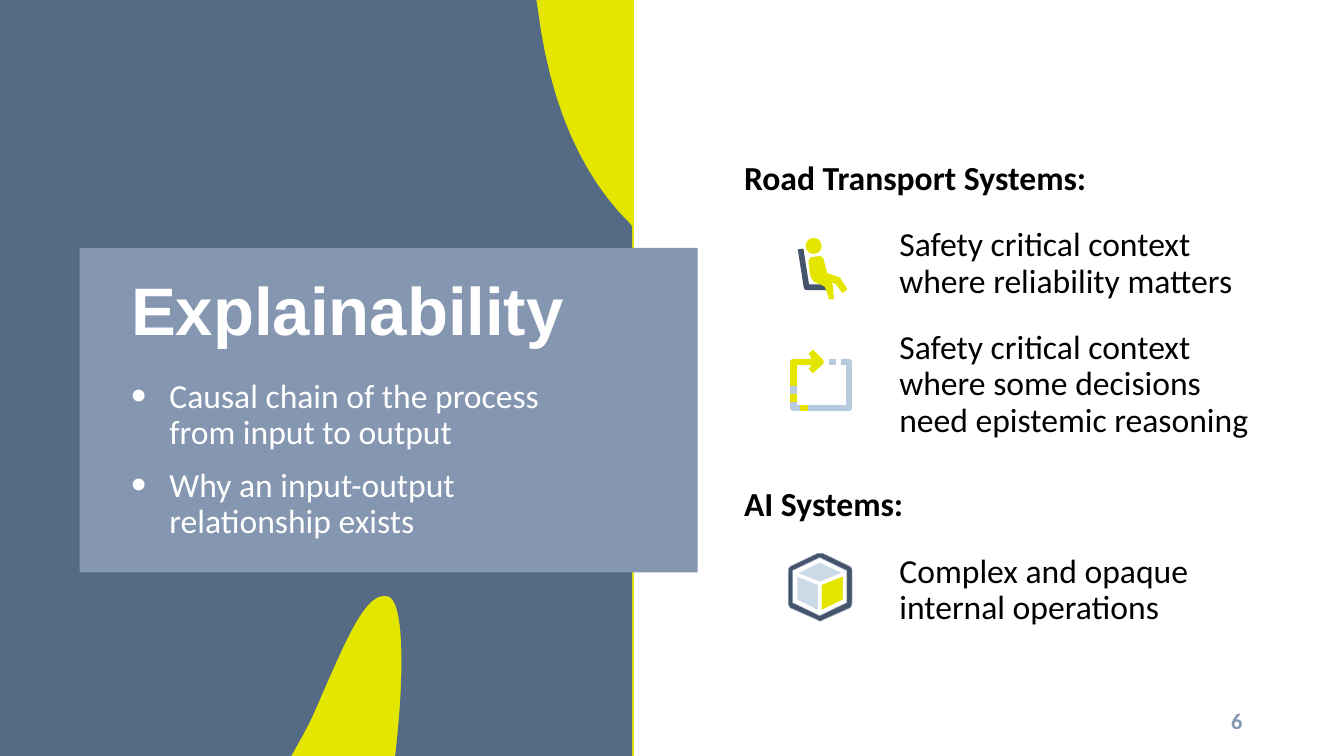
from lxml import etree
from pptx import Presentation
from pptx import util as u
from pptx.dml.color import RGBColor
from pptx.enum import shapes, text
from pptx.oxml import ns

PX = 9144  # EMU per px, 100 px to the inch
CURVE_STEPS = 12
COLORS = {
    "yellow": "E5E600", "panel": "556A85", "card": "8496B0", "navy": "44546A",
    "pale": "CCDAE8", "sky": "B8CBDE", "white": "FFFFFF", "black": "000000",
}

# Outlines in px: M move, L line, C curve, Z close
PANEL = ("M 0 0 L 532 0 L 533 6 C 545 105 578 176 625 222 L 627 225 L 627 750 "
         "L 392 750 L 394 731 C 401 663 400 598 386 592 C 364 584 345 630 313 704 "
         "C 309 713 305 721 300 730 L 289 750 L 0 750 Z")
CUBE_FACES = ("M 813 558 L 836 568 C 827 571 821 574 813 577 C 806 574 798 571 791 568 Z "
              "M 788 570 C 792 572 805 578 811 580 L 811 606 L 788 596 Z")
CUBE_FRONT = "M 815 608 L 815 580 L 840 569 L 840 597 Z"
CUBE_EDGES = "M 813 607 L 813 579 L 788 569"
HEXAGON = "M 813 553 L 840 566 L 840 598 L 813 611 L 786 598 L 786 566 Z "
CUBE_GAP = HEXAGON + "M 813 558 L 836 569 L 836 595 L 813 606 L 791 595 L 791 569 Z"
CUBE_FRAME = HEXAGON + (
    "M 813 549 C 813 549 812 549 811 549 L 784 562 C 783 563 782 564 782 566 "
    "L 782 598 C 782 600 783 602 784 603 L 811 615 C 812 616 813 616 813 616 "
    "C 814 616 815 616 816 615 L 843 603 C 844 602 845 600 845 598 L 845 566 "
    "C 845 564 844 563 843 562 L 816 549 C 815 549 814 549 813 549 Z")
LOOP = "M 834 359 L 842 359 L 842 405 L 787 405 L 787 359 L 801 359"
LOOP_TURN = "M 787 383 L 787 359 L 814 359"
LOOP_HEAD = "M 804 349 L 814 359 L 804 368"
SEAT = "M 794 247 L 800 285 L 825 285"
TORSO = ("M 819 281 C 821 281 823 279 822 277 L 817 258 C 817 256 815 254 812 254 "
         "L 806 255 C 803 255 802 258 802 260 L 803 269 C 804 279 809 283 819 281 Z")
LEGS = ("M 839 288 L 837 290 C 836 291 835 290 835 290 L 829 282 L 821 279 "
        "C 821 279 812 274 812 275 L 819 276 L 819 277 L 823 280 "
        "C 824 280 825 281 825 282 C 826 282 826 283 826 284 L 827 295 "
        "C 827 296 827 297 826 297 L 824 297 C 823 297 822 297 822 296 L 819 287 "
        "C 818 285 818 284 817 284 L 810 280 C 810 280 809 278 809 277 L 818 270 "
        "L 832 275 C 833 275 834 276 834 277 L 840 286 C 840 287 840 288 839 288 Z")

BODY = {"size": u.Pt(24), "name": "Calibri"}
HEADING = {**BODY, "bold": True}
TITLE = {"size": u.Pt(48), "name": "Arial", "bold": True}
PAGE_NUMBER = {"size": u.Pt(16), "name": "Calibri", "bold": True}
BODY_SPACING = {"line_spacing": 0.9, "space_after": u.Pt(6)}


def rgb(name):
    return RGBColor.from_string(COLORS[name])


def set_all(target, values):
    for key, value in values.items():
        setattr(target, key, value)


def paint(shape, fill=None, line=None, weight=1):
    shape.shadow.inherit = False
    if fill:
        shape.fill.solid()
        shape.fill.fore_color.rgb = rgb(fill)
    else:
        shape.fill.background()
    if line:
        shape.line.color.rgb = rgb(line)
        shape.line.width = u.Pt(weight)
    else:
        shape.line.fill.background()


def add_block(slide, kind, box, **look):
    paint(slide.shapes.add_shape(kind, *(n * PX for n in box)), **look)


def curve_points(p0, p1, p2, p3):
    for step in range(1, CURVE_STEPS + 1):
        t = step / CURVE_STEPS
        s = 1 - t
        yield tuple(s**3 * a + 3 * s * s * t * b + 3 * s * t * t * c + t**3 * d
                    for a, b, c, d in zip(p0, p1, p2, p3))


def read_contours(outline):
    """Return (points, closed) pairs with the curves flattened."""
    contours = []
    for part in outline.split("M")[1:]:
        words = part.replace("Z", "").split()
        points, pending, in_curve = [], [], False
        while words:
            if words[0] in "LC":
                in_curve = words.pop(0) == "C"
            pending.append((int(words.pop(0)) * PX, int(words.pop(0)) * PX))
            if not in_curve:
                points += pending
                pending = []
            elif len(pending) == 3:
                points += curve_points(points[-1], *pending)
                pending = []
        contours.append((points, "Z" in part))
    return contours


def add_outline(slide, outline, **look):
    builder = None
    for points, closed in read_contours(outline):
        if builder is None:
            builder = slide.shapes.build_freeform(*points[0], scale=1.0)
        else:
            builder.move_to(*points[0])
        builder.add_line_segments(points[1:], close=closed)
    paint(builder.convert_to_shape(), **look)


def add_stroke(slide, ends, color, weight):
    stroke = slide.shapes.add_connector(shapes.MSO_CONNECTOR.STRAIGHT, *(n * PX for n in ends))
    stroke.line.color.rgb = rgb(color)
    stroke.line.width = u.Pt(weight)
    etree.SubElement(stroke._element.spPr, ns.qn("a:effectLst"))


def add_bullet(paragraph, color):
    props = paragraph._p.get_or_add_pPr()
    props.set("marL", str(38 * PX))
    props.set("indent", str(-38 * PX))
    bullet_color = etree.SubElement(props, ns.qn("a:buClr"))
    etree.SubElement(bullet_color, ns.qn("a:srgbClr"), val=COLORS[color])
    etree.SubElement(props, ns.qn("a:buSzPct"), val="130000")
    etree.SubElement(props, ns.qn("a:buFont"), typeface="Arial")
    etree.SubElement(props, ns.qn("a:buChar"), char="•")


def add_text(slide, box, lines, font, color="black", spacing=BODY_SPACING,
             bullets=False, **frame_format):
    frame = slide.shapes.add_textbox(*(n * PX for n in box)).text_frame
    margins = dict.fromkeys(
        ("margin_left", "margin_top", "margin_right", "margin_bottom"), 0)
    set_all(frame, {"word_wrap": True, **margins, **frame_format})
    for index, line in enumerate(lines):
        paragraph = frame.add_paragraph() if index else frame.paragraphs[0]
        set_all(paragraph, spacing)
        if index:
            paragraph.space_before = u.Pt(6)
        if bullets:
            add_bullet(paragraph, color)
        run = paragraph.add_run()
        run.text = line
        set_all(run.font, font)
        run.font.color.rgb = rgb(color)


def draw_passenger(slide):
    add_outline(slide, SEAT, line="navy", weight=4.05)
    for body_part in (TORSO, LEGS):
        add_outline(slide, body_part, fill="yellow")
    add_block(slide, shapes.MSO_SHAPE.OVAL, (799, 236, 16, 16), fill="yellow")


def draw_loop(slide):
    weight = 4.55
    add_outline(slide, LOOP, line="sky", weight=weight)
    add_stroke(slide, (822, 359, 829, 359), "sky", weight)
    add_outline(slide, LOOP_TURN, line="yellow", weight=weight)
    for dash in ((787, 399, 787, 391), (801, 405, 793, 405)):
        add_stroke(slide, dash, "yellow", weight)
    add_outline(slide, LOOP_HEAD, fill="yellow", line="yellow", weight=weight)


def draw_cube(slide):
    add_outline(slide, CUBE_FACES, fill="pale", line="pale", weight=2.2)
    add_outline(slide, CUBE_FRONT, fill="yellow", line="yellow", weight=2.2)
    add_outline(slide, CUBE_EDGES, line="white", weight=2.64)
    add_stroke(slide, (813, 579, 838, 569), "white", 2.64)
    add_outline(slide, CUBE_GAP, fill="white")
    add_outline(slide, CUBE_FRAME, fill="navy", line="card", weight=0.44)


def main():
    deck = Presentation()
    set_all(deck, {"slide_width": 1333 * PX, "slide_height": 750 * PX})
    slide = deck.slides.add_slide(deck.slide_layouts[6])

    # Left panel and card
    rectangle = shapes.MSO_SHAPE.RECTANGLE
    add_block(slide, rectangle, (0, 0, 628, 750), fill="yellow", line="yellow")
    add_outline(slide, PANEL, fill="panel")
    add_block(slide, rectangle, (79, 246, 613, 322), fill="card")
    add_text(slide, (130, 273, 578, 73), ["Explainability"], TITLE, "white",
             {"line_spacing": u.Pt(52)}, vertical_anchor=text.MSO_ANCHOR.BOTTOM)
    add_text(slide, (130, 376, 449, 162),
             ["Causal chain of the process from input to output",
              "Why an input-output relationship exists"], BODY, "white", bullets=True)

    # Headings on the right
    for top, heading in ((160, "Road Transport Systems:"), (484, "AI Systems:")):
        add_text(slide, (738, top, 388, 36), [heading], HEADING)

    # Points with their icons
    points = (
        (226, 350, 73, "Safety critical context where reliability matters", draw_passenger),
        (328, 363, 109, "Safety critical context where some decisions need epistemic reasoning",
         draw_loop),
        (550, 361, 73, "Complex and opaque internal operations", draw_cube),
    )
    for top, width, height, point, draw_icon in points:
        add_text(slide, (892, top, width, height), [point], BODY)
        draw_icon(slide)

    # Page number
    add_text(slide, (942, 695, 300, 40), ["6"], PAGE_NUMBER, "card",
             {"alignment": text.PP_ALIGN.RIGHT}, margin_right=10 * PX,
             vertical_anchor=text.MSO_ANCHOR.MIDDLE)
    deck.save("out.pptx")


if __name__ == "__main__":
    main()
